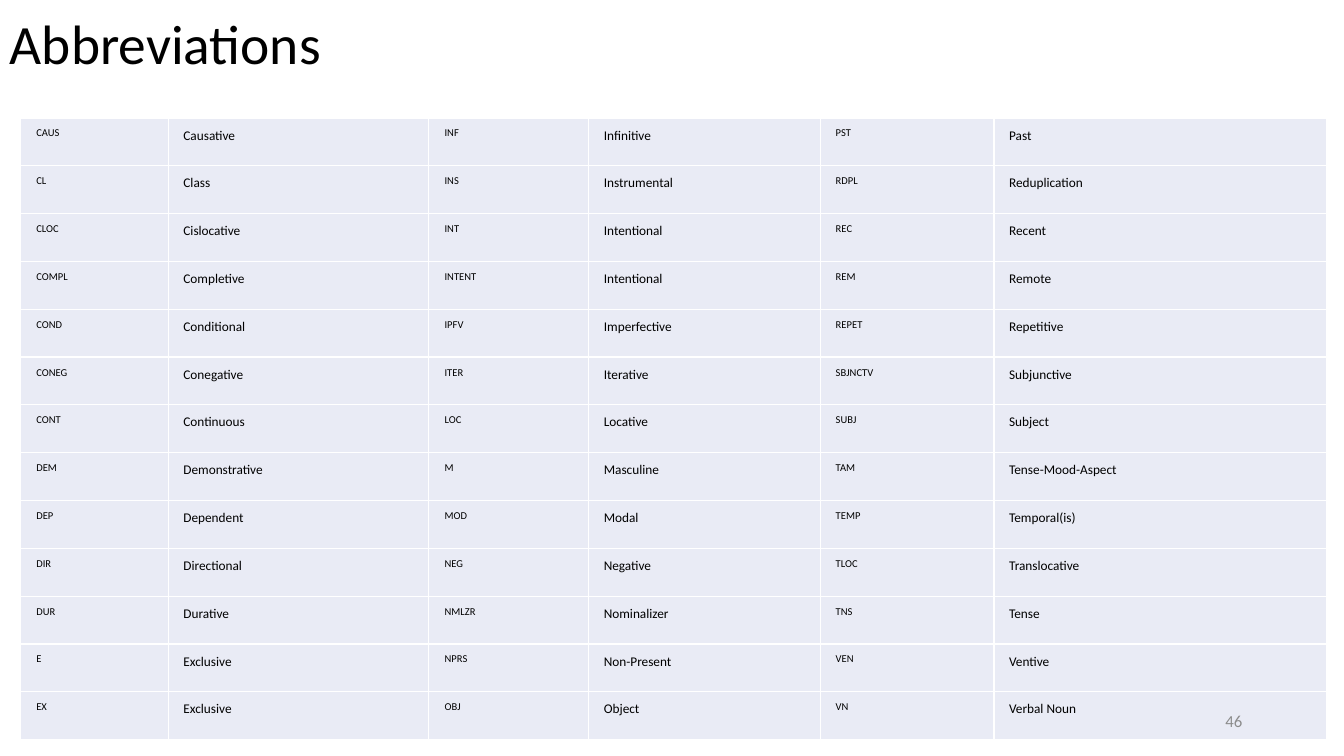
"""Build the slide listing grammatical abbreviations."""
from lxml.etree import SubElement
from pptx import Presentation
from pptx.dml.color import RGBColor
from pptx.enum.text import MSO_ANCHOR as ANCHOR, PP_ALIGN as ALIGN
from pptx.oxml.ns import qn
from pptx.util import Inches, Pt

ROWS = [
    ("CAUS", "Causative", "INF", "Infinitive", "PST", "Past"),
    ("CL", "Class", "INS", "Instrumental", "RDPL", "Reduplication"),
    ("CLOC", "Cislocative", "INT", "Intentional", "REC", "Recent"),
    ("COMPL", "Completive", "INTENT", "Intentional", "REM", "Remote"),
    ("COND", "Conditional", "IPFV", "Imperfective", "REPET", "Repetitive"),
    ("CONEG", "Conegative", "ITER", "Iterative", "SBJNCTV", "Subjunctive"),
    ("CONT", "Continuous", "LOC", "Locative", "SUBJ", "Subject"),
    ("DEM", "Demonstrative", "M", "Masculine", "TAM", "Tense-Mood-Aspect"),
    ("DEP", "Dependent", "MOD", "Modal", "TEMP", "Temporal(is)"),
    ("DIR", "Directional", "NEG", "Negative", "TLOC", "Translocative"),
    ("DUR", "Durative", "NMLZR", "Nominalizer", "TNS", "Tense"),
    ("E", "Exclusive", "NPRS", "Non-Present", "VEN", "Ventive"),
    ("EX", "Exclusive", "OBJ", "Object", "VN", "Verbal Noun"),
]
COL_WIDTHS = [1.47, 2.58, 1.59, 2.3, 1.72, 3.3]
TABLE_HEIGHT = 6.17


def rgb(color):
    return RGBColor.from_string(color)


def write(tf, text, size, color):
    tf.word_wrap = True
    p = tf.paragraphs[0]
    p.text = text
    p.font.name = "Calibri"
    p.font.size = Pt(size)
    p.font.color.rgb = rgb(color)
    return p


prs = Presentation()
prs.slide_width, prs.slide_height = Inches(13.33), Inches(7.5)
s = prs.slides.add_slide(prs.slide_layouts[6])

title = s.shapes.add_textbox(Inches(0), Inches(0.17), Inches(13.17), Inches(0.58))
title.text_frame.vertical_anchor = ANCHOR.MIDDLE
write(title.text_frame, "Abbreviations", 39.6, "000000").line_spacing = 0.9

table = s.shapes.add_table(len(ROWS), len(COL_WIDTHS), Inches(0.2), Inches(1.17),
                           Inches(sum(COL_WIDTHS)), Inches(TABLE_HEIGHT)).table
table.first_row = table.horz_banding = False
for column, width in zip(table.columns, COL_WIDTHS):
    column.width = Inches(width)
for row, texts in zip(table.rows, ROWS):
    row.height = Inches(TABLE_HEIGHT / len(ROWS))
    for i, (cell, text) in enumerate(zip(row.cells, texts)):
        p = write(cell.text_frame, text, 9.5 if i % 2 else 7.5, "000000")
        p.line_spacing = 1.15
        pPr = p._p.get_or_add_pPr()
        pPr.set("marL", str(Inches(0.09 if i in (0, 2) else 0.08)))
        pPr.set("indent", "0")
        cell.margin_left = cell.margin_right = Inches(0.07)
        cell.margin_top = cell.margin_bottom = Inches(0.07)
        tcPr = cell._tc.get_or_add_tcPr()
        for side in ("a:lnL", "a:lnR", "a:lnT", "a:lnB"):
            ln = SubElement(tcPr, qn(side), w=str(Pt(1)))
            SubElement(SubElement(ln, qn("a:solidFill")), qn("a:srgbClr"), val="FFFFFF")
        cell.fill.solid()
        cell.fill.fore_color.rgb = rgb("E9EBF5")

number = s.shapes.add_textbox(Inches(9.42), Inches(6.95), Inches(3), Inches(0.4))
number.text_frame.vertical_anchor = ANCHOR.MIDDLE
write(number.text_frame, "46", 12, "8C8C8C").alignment = ALIGN.RIGHT

prs.save("out.pptx")
